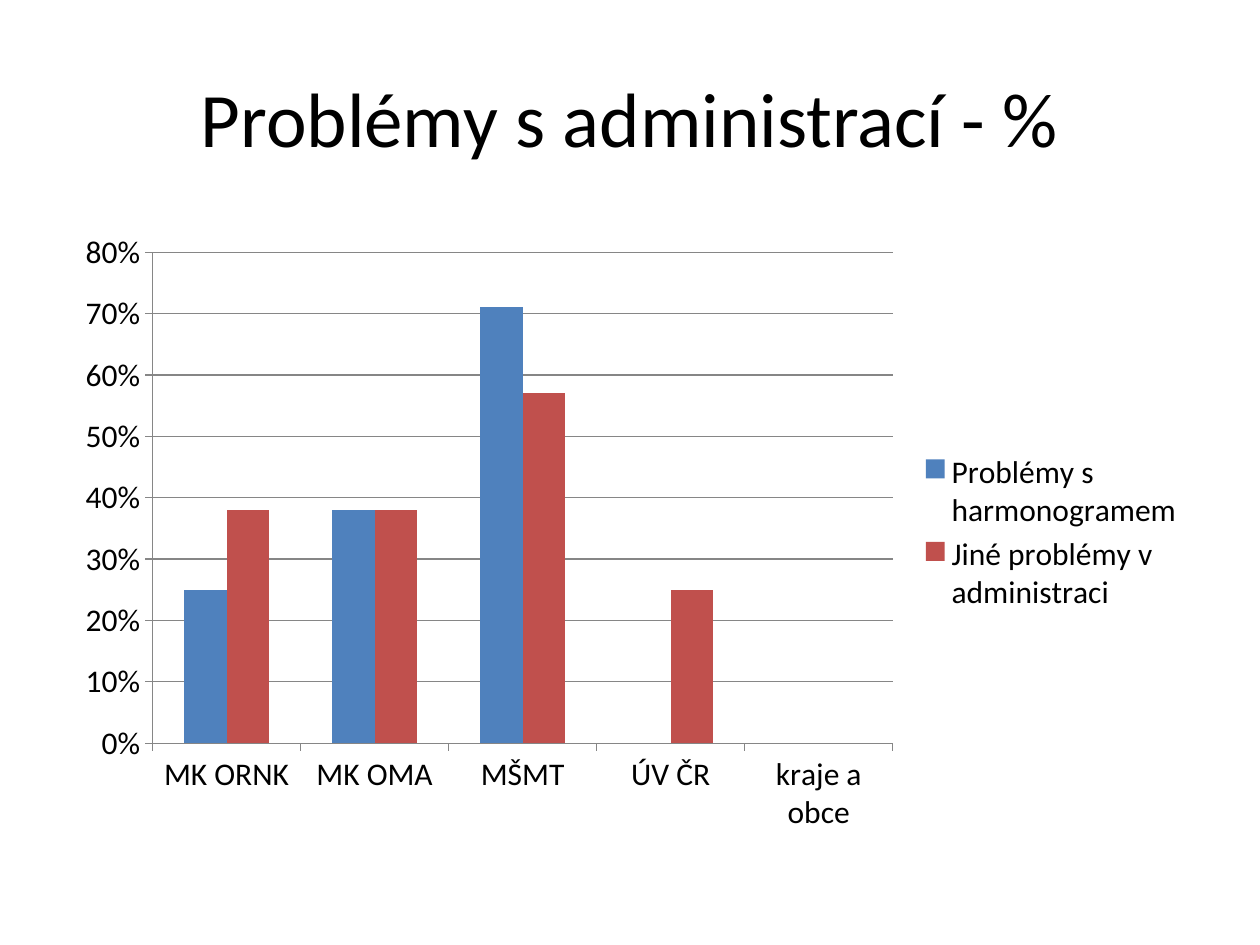
import pptx
import pptx.chart.data
import pptx.dml.color
import pptx.enum.chart
import pptx.enum.text
import pptx.util
from pptx.util import Cm

TITLE = "Problémy s administrací - %"
CATEGORIES = ["MK ORNK", "MK OMA", "MŠMT", "ÚV ČR", "kraje a obce"]
SERIES = [
    ("Problémy s harmonogramem", [0.25, 0.38, 0.71, None, None], "blue"),
    ("Jiné problémy v administraci", [0.38, 0.38, 0.57, 0.25, None], "red"),
]
COLORS = {"text": "000000", "line": "868686", "blue": "4F81BD", "red": "C0504D"}
FONT = "Calibri"
SLIDE_WIDTH, SLIDE_HEIGHT = Cm(25.4), Cm(19.05)
MARGIN = Cm(1.27)
CONTENT_WIDTH = SLIDE_WIDTH - 2 * MARGIN


def rgb(name):
    return pptx.dml.color.RGBColor.from_string(COLORS[name])


def format_font(font, size, color="text"):
    font.name = FONT
    font.size = pptx.util.Pt(size)
    font.color.rgb = rgb(color)


def add_text(slide, text, *, top, height, size, color="text"):
    """Add a centred text box across the content width."""
    shape = slide.shapes.add_textbox(MARGIN, top, CONTENT_WIDTH, height)
    frame = shape.text_frame
    frame.word_wrap = True
    frame.vertical_anchor = pptx.enum.text.MSO_ANCHOR.MIDDLE
    paragraph = frame.paragraphs[0]
    paragraph.alignment = pptx.enum.text.PP_ALIGN.CENTER
    run = paragraph.add_run()
    run.text = text
    format_font(run.font, size, color)


def format_line(line):
    line.color.rgb = rgb("line")
    line.width = pptx.util.Pt(0.75)


def add_column_chart(slide, *, top, height):
    data = pptx.chart.data.CategoryChartData(number_format="0%")
    data.categories = CATEGORIES
    for name, values, _ in SERIES:
        data.add_series(name, values)
    chart = slide.shapes.add_chart(
        pptx.enum.chart.XL_CHART_TYPE.COLUMN_CLUSTERED,
        MARGIN, top, CONTENT_WIDTH, height, data,
    ).chart
    format_font(chart.font, 18)
    chart.has_title = False
    chart.has_legend = True
    chart.legend.position = pptx.enum.chart.XL_LEGEND_POSITION.RIGHT
    chart.legend.include_in_layout = False

    plot = chart.plots[0]
    plot.vary_by_categories = False
    plot.gap_width = 150
    plot.overlap = 0
    for series, (_, _, color) in zip(plot.series, SERIES):
        series.format.fill.solid()
        series.format.fill.fore_color.rgb = rgb(color)
        series.invert_if_negative = False

    for axis in (chart.category_axis, chart.value_axis):
        axis.major_tick_mark = pptx.enum.chart.XL_TICK_MARK.OUTSIDE
        axis.minor_tick_mark = pptx.enum.chart.XL_TICK_MARK.NONE
        format_line(axis.format.line)
    value_axis = chart.value_axis
    value_axis.minimum_scale, value_axis.maximum_scale = 0, 0.8
    value_axis.major_unit = 0.1
    value_axis.has_major_gridlines = True
    format_line(value_axis.major_gridlines.format.line)
    value_axis.tick_labels.number_format = "0%"
    value_axis.tick_labels.number_format_is_linked = False


def main():
    presentation = pptx.Presentation()
    presentation.slide_width = SLIDE_WIDTH
    presentation.slide_height = SLIDE_HEIGHT
    slide = presentation.slides.add_slide(presentation.slide_layouts[6])
    add_text(slide, TITLE, top=Cm(0.76), height=Cm(3.18), size=44)
    add_column_chart(slide, top=Cm(4.45), height=Cm(12.57))
    presentation.save("out.pptx")


if __name__ == "__main__":
    main()
